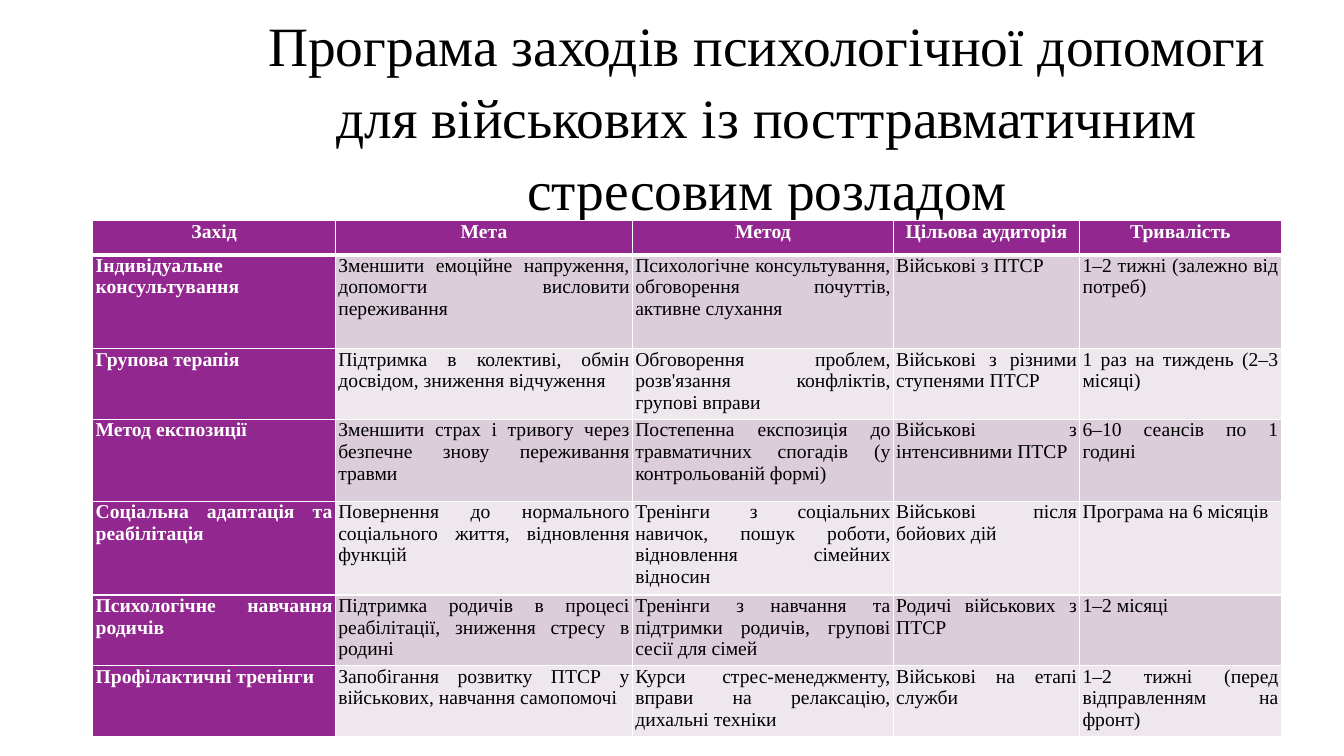
from dataclasses import dataclass

from lxml import etree
from pptx import Presentation
from pptx.dml.color import RGBColor
from pptx.enum import text as t
from pptx.oxml import ns
from pptx.util import Cm, Pt


@dataclass(frozen=True)
class Theme:
    font: str = "Times New Roman"
    title_size: float = 39.6
    cell_size: float = 14
    black: str = "000000"
    white: str = "FFFFFF"
    accent: str = "92278F"
    bands: tuple = ("DCCDDB", "EEE8EE")
    thin: float = 1
    thick: float = 3


THEME = Theme()
TITLE = ("Програма заходів психологічної допомоги для військових "
         "із посттравматичним стресовим розладом")
COL_WIDTHS = (6.12, 7.49, 6.58, 4.7, 5.08)
ROW_HEIGHTS = (0.86, 2.36, 1.78, 2.06, 2.36, 1.78, 1.78)
ROWS = (
    ("Захід", "Мета", "Метод", "Цільова аудиторія", "Тривалість"),
    ("Індивідуальне консультування",
     "Зменшити емоційне напруження, допомогти висловити переживання",
     "Психологічне консультування, обговорення почуттів, активне слухання",
     "Військові з ПТСР",
     "1–2 тижні (залежно від потреб)"),
    ("Групова терапія",
     "Підтримка в колективі, обмін досвідом, зниження відчуження",
     "Обговорення проблем, розв'язання конфліктів, групові вправи",
     "Військові з різними ступенями ПТСР",
     "1 раз на тиждень (2–3 місяці)"),
    ("Метод експозиції",
     "Зменшити страх і тривогу через безпечне знову переживання травми",
     "Постепенна експозиція до травматичних спогадів (у контрольованій формі)",
     "Військові з інтенсивними ПТСР",
     "6–10 сеансів по 1 годині"),
    ("Соціальна адаптація та реабілітація",
     "Повернення до нормального соціального життя, відновлення функцій",
     "Тренінги з соціальних навичок, пошук роботи, відновлення сімейних відносин",
     "Військові після бойових дій",
     "Програма на 6 місяців"),
    ("Психологічне навчання родичів",
     "Підтримка родичів в процесі реабілітації, зниження стресу в родині",
     "Тренінги з навчання та підтримки родичів, групові сесії для сімей",
     "Родичі військових з ПТСР",
     "1–2 місяці"),
    ("Профілактичні тренінги",
     "Запобігання розвитку ПТСР у військових, навчання самопомочі",
     "Курси стрес-менеджменту, вправи на релаксацію, дихальні техніки",
     "Військові на етапі служби",
     "1–2 тижні (перед відправленням на фронт)"),
)


def set_attrs(obj, values):
    for name, value in values.items():
        setattr(obj, name, value)


def write(p, words, size, color, bold, align):
    p.alignment = align
    r = p.add_run()
    r.text = words
    set_attrs(r.font, {"name": THEME.font, "size": Pt(size), "bold": bold})
    r.font.color.rgb = RGBColor.from_string(color)


def add_borders(cell, widths):
    """Draw white cell edges; widths maps the sides L, R, T, B to points."""
    props = cell._tc.get_or_add_tcPr()
    for side, width in widths.items():
        ln = etree.SubElement(props, ns.qn(f"a:ln{side}"), w=str(Pt(width)))
        fill = etree.SubElement(ln, ns.qn("a:solidFill"))
        etree.SubElement(fill, ns.qn("a:srgbClr"), val=THEME.white)


def place_title(s, left, top, width, height):
    sp = s.shapes.title
    set_attrs(sp, {"left": left, "top": top, "width": width, "height": height})
    tf = sp.text_frame
    set_attrs(tf, {"word_wrap": True, "auto_size": t.MSO_AUTO_SIZE.NONE,
                   "vertical_anchor": t.MSO_ANCHOR.MIDDLE})
    p = tf.paragraphs[0]
    p.line_spacing = 1.08
    write(p, TITLE, THEME.title_size, THEME.black, False, t.PP_ALIGN.CENTER)


def format_cell(cell, row, col, words):
    header = row == 0
    strong = header or col == 0
    add_borders(cell, {"L": THEME.thin, "R": THEME.thin,
                       "T": THEME.thick if row == 1 else THEME.thin,
                       "B": THEME.thick if header else THEME.thin})
    set_attrs(cell, {"margin_left": Cm(0.07), "margin_right": Cm(0.07),
                     "margin_top": 0, "margin_bottom": 0,
                     "vertical_anchor": t.MSO_ANCHOR.TOP})
    fill = THEME.accent if strong else THEME.bands[(row - 1) % 2]
    cell.fill.solid()
    cell.fill.fore_color.rgb = RGBColor.from_string(fill)
    write(cell.text_frame.paragraphs[0], words, THEME.cell_size,
          THEME.white if strong else THEME.black, strong,
          t.PP_ALIGN.CENTER if header else t.PP_ALIGN.JUSTIFY)


def place_programme(s, left, top, width, height):
    """Fill the box with the table, sharing it out in the listed proportions."""
    table = s.shapes.add_table(len(ROWS), len(COL_WIDTHS),
                               left, top, width, height).table
    for column, share in zip(table.columns, COL_WIDTHS):
        column.width = int(width * share / sum(COL_WIDTHS))
    for line, share in zip(table.rows, ROW_HEIGHTS):
        line.height = int(height * share / sum(ROW_HEIGHTS))
    for row, entries in enumerate(ROWS):
        for col, words in enumerate(entries):
            format_cell(table.cell(row, col), row, col, words)


def main():
    prs = Presentation()
    set_attrs(prs, {"slide_width": Cm(33.87), "slide_height": Cm(19.05)})
    s = prs.slides.add_slide(prs.slide_layouts[5])
    place_title(s, Cm(5.46), Cm(1.02), Cm(27.74), Cm(3.68))
    place_programme(s, Cm(2.34), Cm(5.56), Cm(29.95), Cm(13))
    prs.save("out.pptx")


if __name__ == "__main__":
    main()
